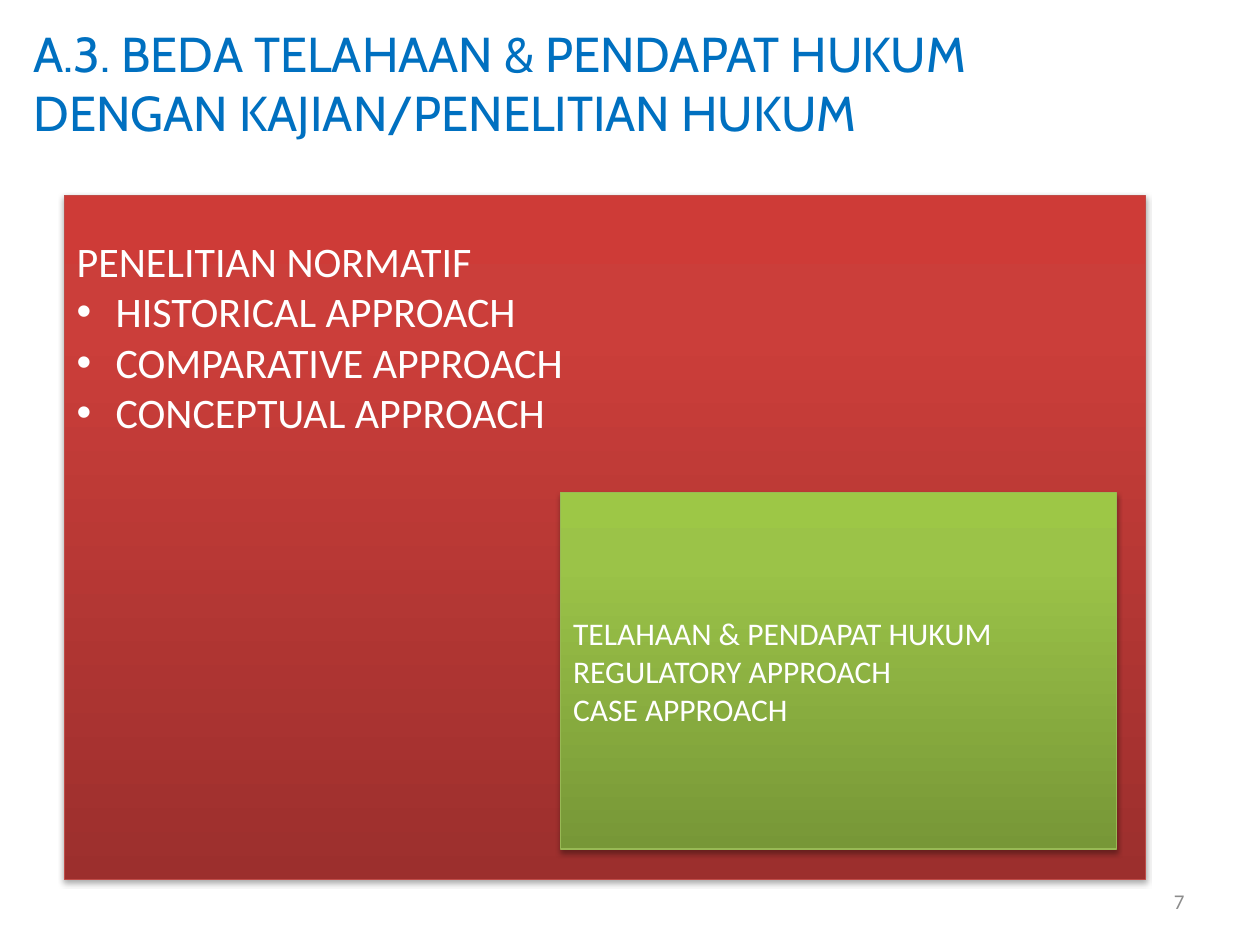
from copy import deepcopy

from lxml import etree
from pptx import Presentation
from pptx.dml.color import RGBColor
from pptx.enum.shapes import MSO_SHAPE
from pptx.enum.text import MSO_ANCHOR, PP_ALIGN
from pptx.oxml.ns import qn
from pptx.util import Emu, Inches, Pt

RECTANGLE = MSO_SHAPE.RECTANGLE
MIDDLE, TOP = MSO_ANCHOR.MIDDLE, MSO_ANCHOR.TOP
LEFT, RIGHT = PP_ALIGN.LEFT, PP_ALIGN.RIGHT
WHITE = "FFFFFF"
STOPS = (0, 0.8, 1)
BULLET_INDENT = Inches(0.31)


def color(hex_code):
    return RGBColor.from_string(hex_code)


def add_paragraph(frame, index, text, size, font, ink, align=LEFT, bullet=False):
    paragraph = frame.add_paragraph() if index else frame.paragraphs[0]
    paragraph.alignment = align
    run = paragraph.add_run()
    run.text = text
    run.font.size = Pt(size)
    run.font.name = font
    run.font.color.rgb = color(ink)
    if bullet:
        properties = paragraph._p.get_or_add_pPr()
        properties.set("marL", str(BULLET_INDENT))
        properties.set("indent", str(-BULLET_INDENT))
        etree.SubElement(properties, qn("a:buFont"), typeface="Arial")
        etree.SubElement(properties, qn("a:buChar"), char="•")


def add_label(slide, bounds, text, size, font, ink, align=LEFT):
    label = slide.shapes.add_textbox(*map(Inches, bounds))
    frame = label.text_frame
    frame.word_wrap = True
    frame.vertical_anchor = MIDDLE
    add_paragraph(frame, 0, text, size, font, ink, align)


def fill_gradient(shape, shades):
    shape.fill.gradient()
    shape.fill.gradient_angle = 90
    stop_list = shape._element.spPr.find(".//" + qn("a:gsLst"))
    stop_list.append(deepcopy(stop_list[-1]))
    for stop, position, shade in zip(shape.fill.gradient_stops, STOPS, shades):
        stop.position = position
        stop.color.rgb = color(shade)


def cast_shadow(shape):
    shape.shadow.inherit = False
    effects = shape._element.spPr.find(qn("a:effectLst"))
    shadow = etree.SubElement(
        effects, qn("a:outerShdw"), blurRad=str(Pt(3.1)), dist=str(Pt(1.8)),
        dir="5400000", rotWithShape="0")
    black = etree.SubElement(shadow, qn("a:srgbClr"), val="000000")
    etree.SubElement(black, qn("a:alpha"), val="35000")


def add_panel(slide, bounds, shades, border, lines, size, anchor, top_inset=0.05):
    panel = slide.shapes.add_shape(RECTANGLE, *map(Inches, bounds))
    fill_gradient(panel, shades)
    panel.line.color.rgb = color(border)
    panel.line.width = Pt(0.75)
    cast_shadow(panel)
    frame = panel.text_frame
    frame.word_wrap = True
    frame.vertical_anchor = anchor
    frame.margin_top = Inches(top_inset)
    for index, (text, bullet) in enumerate(lines):
        add_paragraph(frame, index, text, size, "Calibri", WHITE, bullet=bullet)


def main():
    deck = Presentation()
    deck.slide_width, deck.slide_height = Emu(Inches(10)), Emu(Inches(7.5))
    slide = deck.slides.add_slide(deck.slide_layouts[6])

    add_label(slide, (0.17, 0.03, 7.83, 1.25),
              "A.3. BEDA TELAHAAN & PENDAPAT HUKUM DENGAN KAJIAN/PENELITIAN HUKUM",
              28, "Cabin", "0070C0")
    add_label(slide, (7.17, 6.95, 2.33, 0.4), "7", 12, "Calibri", "8C8C8C", RIGHT)

    normative_research = [
        ("PENELITIAN NORMATIF", False),
        ("HISTORICAL APPROACH", True),
        ("COMPARATIVE APPROACH", True),
        ("CONCEPTUAL APPROACH", True),
    ]
    legal_opinion = [
        ("TELAHAAN & PENDAPAT HUKUM", False),
        ("REGULATORY APPROACH", False),
        ("CASE APPROACH", False),
    ]
    add_panel(slide, (0.51, 1.55, 8.58, 5.43), ("9C2F2D", "CB3E3A", "CE3B37"),
              "BF4C48", normative_research, 24, TOP, 0.32)
    add_panel(slide, (4.45, 3.91, 4.41, 2.83), ("779737", "9BC348", "9DC746"),
              "98B955", legal_opinion, 18, MIDDLE)

    deck.save("out.pptx")


if __name__ == "__main__":
    main()
